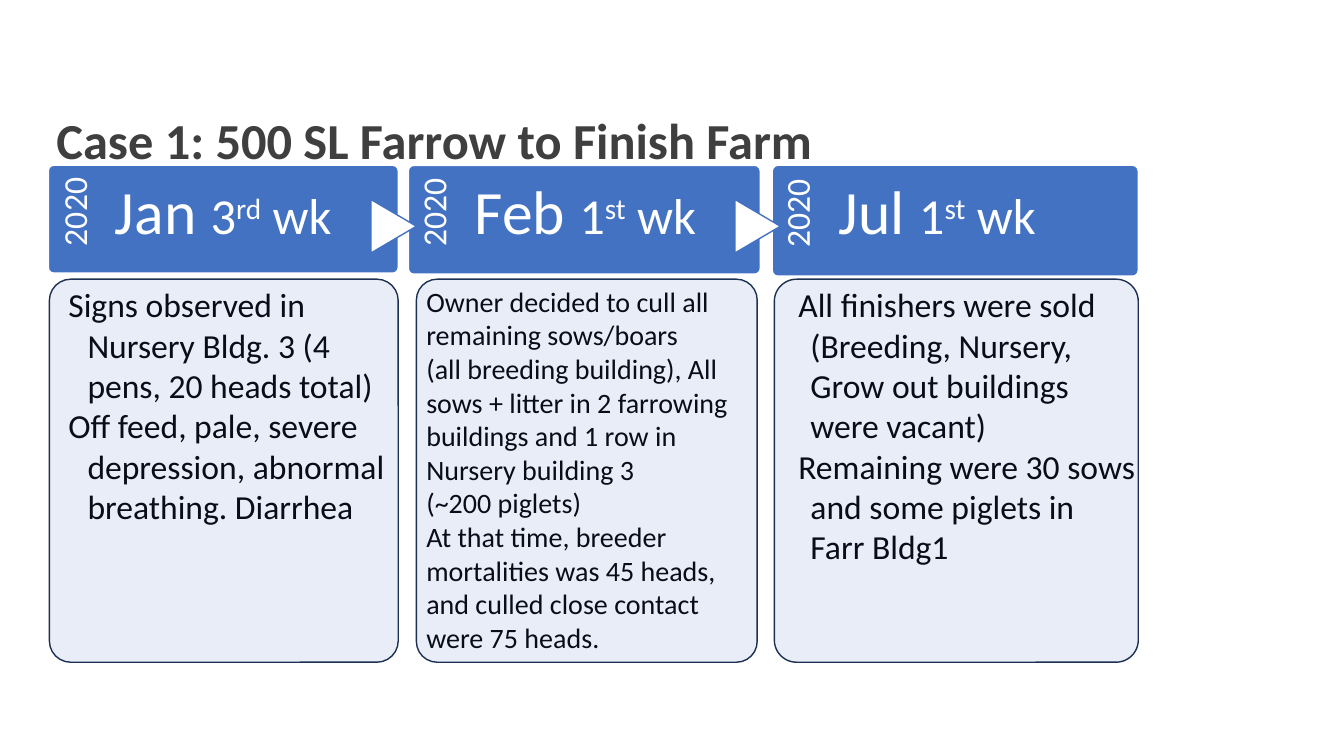
from dataclasses import dataclass

from lxml import etree
from pptx import Presentation
from pptx.dml.color import RGBColor
from pptx.enum.shapes import MSO_SHAPE
from pptx.enum.text import MSO_ANCHOR, MSO_AUTO_SIZE, PP_ALIGN
from pptx.oxml.ns import qn
from pptx.util import Emu, Pt

ROUNDED = MSO_SHAPE.ROUNDED_RECTANGLE
TRIANGLE = MSO_SHAPE.FLOWCHART_EXTRACT
TOP, MIDDLE = MSO_ANCHOR.TOP, MSO_ANCHOR.MIDDLE
LEFT, RIGHT = PP_ALIGN.LEFT, PP_ALIGN.RIGHT
NO_FIT, GROW = MSO_AUTO_SIZE.NONE, MSO_AUTO_SIZE.SHAPE_TO_FIT_TEXT
EMU_PER_PX = 9144  # 100 px to the inch


@dataclass(frozen=True)
class Theme:
    font: str = "Calibri"
    title: str = "3F3F3F"
    text: str = "000000"
    white: str = "FFFFFF"
    bar: str = "4372C3"
    card: str = "4472C4"
    card_line: str = "1C3052"
    card_alpha: int = 12
    title_size: int = 36
    month_size: int = 44
    week_size: int = 36
    year_size: int = 24


THEME = Theme()
BAR_TOP, CARD_TOP, CARD_HEIGHT = 164, 277, 380

# One entry per step; boxes are (left, width) and bars add a height
STEPS = [
    dict(month="Jan", week="3", suffix="rd", bar=(48, 347, 107), heading_width=258,
         label=(88, 69), card=(49, 346), text=(58, 346, 252), size=24, indent=19,
         notes=["Signs observed in Nursery Bldg. 3 (4 pens, 20 heads total)",
                "Off feed, pale, severe depression, abnormal breathing. Diarrhea"]),
    dict(month="Feb", week="1", suffix="st", bar=(405, 349, 108), heading_width=260,
         label=(88, 70), card=(413, 338), text=(413, 346, 380), size=20, indent=0,
         notes=["Owner decided to cull all remaining sows/boars",
                "(all breeding building), All sows + litter in 2 farrowing buildings "
                "and 1 row in Nursery building 3",
                "(~200 piglets)",
                "At that time, breeder mortalities was 45 heads, and culled close "
                "contact were 75 heads."]),
    dict(month="Jul", week="1", suffix="st", bar=(766, 363, 110), heading_width=270,
         label=(90, 73), card=(768, 361), text=(782, 354, 333), size=24, indent=12,
         notes=["All finishers were sold (Breeding, Nursery, Grow out buildings "
                "were vacant)",
                "Remaining were 30 sows and some piglets in Farr Bldg1"]),
]


def px(n):
    return Emu(n * EMU_PER_PX)


def rgb(value):
    return RGBColor.from_string(value)


def box(*lengths):
    return [px(n) for n in lengths]


def set_frame(tf, insets, anchor=TOP, fit=NO_FIT):
    tf.word_wrap = True
    tf.auto_size = fit
    tf.vertical_anchor = anchor
    tf.margin_left, tf.margin_top, tf.margin_right, tf.margin_bottom = box(*insets)


def style(p, size, color, bold=False, align=LEFT, spacing=1.0):
    p.alignment = align
    p.line_spacing = spacing
    p.font.name = THEME.font
    p.font.size = Pt(size)
    p.font.bold = bold
    p.font.color.rgb = rgb(color)


def add_panel(shapes, kind, at, fill, line, corner=None):
    sp = shapes.add_shape(kind, *box(*at))
    sp.shadow.inherit = False
    sp.fill.solid()
    sp.fill.fore_color.rgb = rgb(fill)
    sp.line.color.rgb = rgb(line)
    sp.line.width = Pt(1)
    if corner is not None:
        sp.adjustments[0] = corner
    return sp


def add_title(s, text):
    sp = s.shapes.title
    sp.left, sp.top, sp.width, sp.height = box(46, 93, 1123, 99)
    set_frame(sp.text_frame, (10, 5, 10, 5), MIDDLE)
    p = sp.text_frame.paragraphs[0]
    p.text = text
    style(p, THEME.title_size, THEME.title, bold=True, spacing=0.9)


def add_year(shapes, left, size):
    sp = shapes.add_textbox(*box(left, BAR_TOP + 10, *size))
    sp.rotation = 270
    set_frame(sp.text_frame, (0, 9, 12, 0))
    p = sp.text_frame.paragraphs[0]
    p.text = "2020"
    style(p, THEME.year_size, THEME.white, align=RIGHT, spacing=0.9)


def add_heading(shapes, step, at):
    sp = shapes.add_textbox(*box(*at))
    set_frame(sp.text_frame, (0, 16, 0, 0))
    p = sp.text_frame.paragraphs[0]
    style(p, THEME.week_size, THEME.white, spacing=0.9)
    month, _, suffix, _ = [p.add_run() for _ in range(4)]
    for r, text in zip(p.runs, (step["month"] + " ", step["week"], step["suffix"], " wk")):
        r.text = text
    month.font.size = Pt(THEME.month_size)
    suffix.font._element.set("baseline", "30000")


def add_bar(shapes, step, arrow):
    left, width, height = step["bar"]
    add_panel(shapes, ROUNDED, (left, BAR_TOP, width, height), THEME.bar, THEME.white, 0.05)
    add_year(shapes, left - 9, step["label"])
    if arrow:
        sp = add_panel(shapes, TRIANGLE, (left - 41, BAR_TOP + 38, 53, 45),
                       THEME.white, THEME.bar)
        sp.rotation = 90
    add_heading(shapes, step, (left + 66, BAR_TOP, step["heading_width"], height))


def add_notes(s, step):
    left, width, height = step["text"]
    sp = s.shapes.add_textbox(*box(left, CARD_TOP, width, height))
    tf = sp.text_frame
    set_frame(tf, (10, 5, 10, 5), fit=GROW)
    for i, note in enumerate(step["notes"]):
        p = tf.add_paragraph() if i else tf.paragraphs[0]
        p.text = note
        p.level = 1
        # Hanging indent
        pPr = p._p.get_or_add_pPr()
        pPr.set("marL", str(px(step["indent"])))
        pPr.set("indent", str(-px(step["indent"])))
        style(p, step["size"], THEME.text)


def add_card(s, step):
    left, width = step["card"]
    sp = add_panel(s.shapes, ROUNDED, (left, CARD_TOP, width, CARD_HEIGHT),
                   THEME.card, THEME.card_line, 0.061)
    # Translucent fill lets the notes show through
    color = sp._element.spPr.find(qn("a:solidFill"))[0]
    etree.SubElement(color, qn("a:alpha")).set("val", str(THEME.card_alpha * 1000))


def main():
    prs = Presentation()
    prs.slide_width, prs.slide_height = box(1333, 750)
    s = prs.slides.add_slide(prs.slide_layouts[5])
    add_title(s, "Case 1: 500 SL Farrow to Finish Farm")

    # Timeline bars
    timeline = s.shapes.add_group_shape()
    for i, step in enumerate(STEPS):
        add_bar(timeline.shapes, step, arrow=i > 0)

    # Notes, with the cards laid over them
    for step in STEPS:
        add_notes(s, step)
    for step in STEPS:
        add_card(s, step)

    prs.save("out.pptx")


if __name__ == "__main__":
    main()
